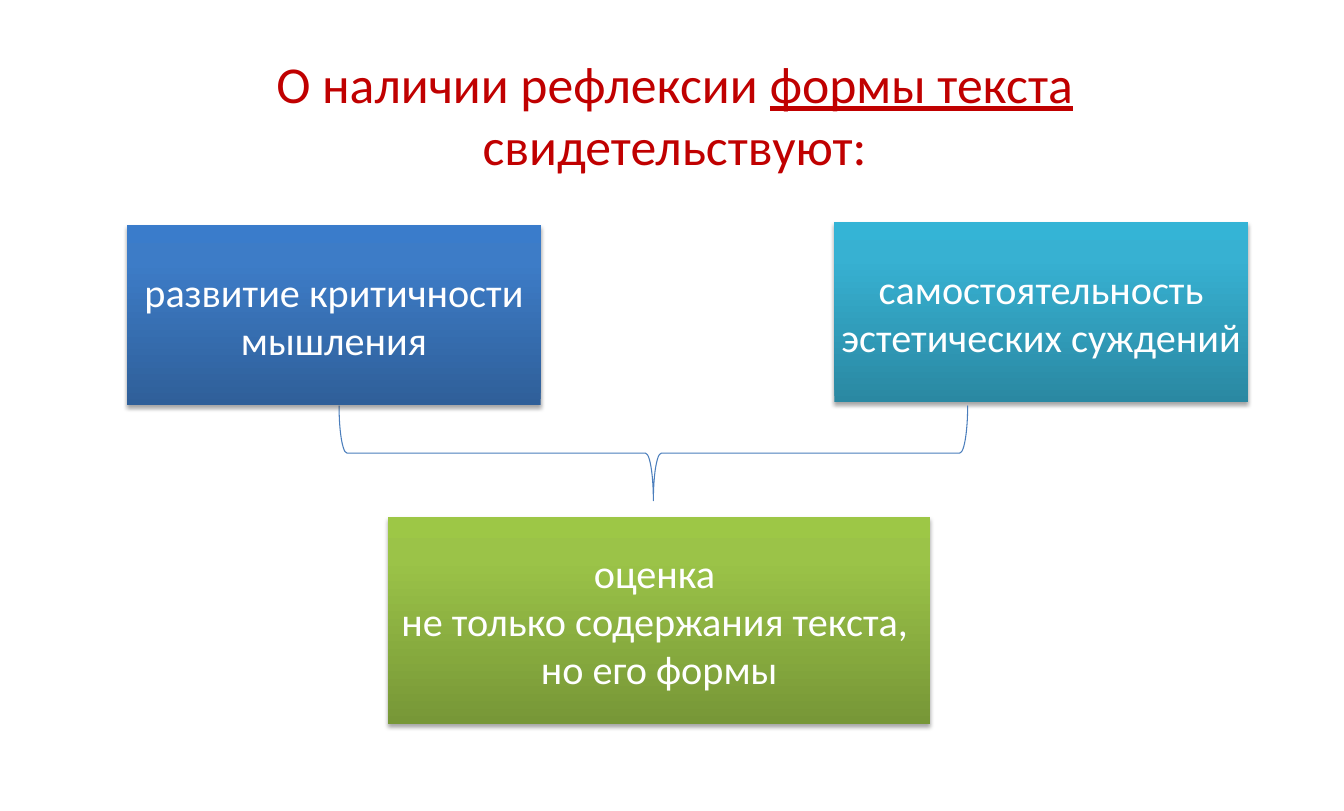
from lxml import etree
from pptx import Presentation
from pptx.dml.color import RGBColor
from pptx.enum.shapes import MSO_SHAPE as Shape
from pptx.enum.text import MSO_ANCHOR as Anchor, PP_ALIGN as Align
from pptx.oxml import parse_xml
from pptx.oxml.ns import nsdecls, qn
from pptx.util import Inches, Pt

FONT = "Calibri"
COLORS = {"title": "C00000", "text": "FFFFFF", "brace": "4B7EBC", "shadow": "000000"}
# Gradient stops from the bottom edge to the top edge
GRADIENTS = {
    "blue": ("2F5F99", "3D7CC7", "3A7CCB"),
    "teal": ("2A88A2", "37B1D2", "34B4D6"),
    "green": ("779737", "9BC348", "9DC746"),
}
STOPS = (0, 80, 100)


def style_font(font, size, color):
    font.name = FONT
    font.size = Pt(size)
    font.color.rgb = RGBColor.from_string(COLORS[color])


def set_insets(frame, side, end):
    frame.margin_left = frame.margin_right = Inches(side)
    frame.margin_top = frame.margin_bottom = Inches(end)


def add_gradient(shape, colors):
    """Fill upwards; the gradient goes before the line element."""
    stops = "".join(
        f'<a:gs pos="{pos * 1000}"><a:srgbClr val="{color}"/></a:gs>'
        for pos, color in zip(STOPS, colors)
    )
    shape.line.fill.background()
    line = shape._element.spPr.find(qn("a:ln"))
    line.addprevious(parse_xml(
        f'<a:gradFill {nsdecls("a")} rotWithShape="1"><a:gsLst>{stops}</a:gsLst>'
        '<a:lin ang="16200000" scaled="0"/></a:gradFill>'
    ))


def add_shadow(shape):
    shape.shadow.inherit = False
    effects = shape._element.spPr.find(qn("a:effectLst"))
    shadow = etree.SubElement(
        effects, qn("a:outerShdw"), blurRad=str(Pt(3.1)), dist=str(Pt(1.8)),
        dir="5400000", rotWithShape="0",
    )
    color = etree.SubElement(shadow, qn("a:srgbClr"), val=COLORS["shadow"])
    etree.SubElement(color, qn("a:alpha"), val="35000")


def add_title(slide, box, parts):
    frame = slide.shapes.add_textbox(*map(Inches, box)).text_frame
    frame.word_wrap = True
    set_insets(frame, 0, 0)
    heading = frame.paragraphs[0]
    heading.alignment = Align.CENTER
    for words, underlined in parts:
        run = heading.add_run()
        run.text = words
        style_font(run.font, 36, "title")
        run.font.underline = underlined


def add_card(slide, box, text, gradient, insets=(0.1, 0.05)):
    card = slide.shapes.add_shape(Shape.RECTANGLE, *map(Inches, box))
    add_gradient(card, GRADIENTS[gradient])
    add_shadow(card)
    frame = card.text_frame
    frame.word_wrap = True
    frame.vertical_anchor = Anchor.MIDDLE
    set_insets(frame, *insets)
    frame.text = text
    for paragraph in frame.paragraphs:
        paragraph.alignment = Align.CENTER
        for run in paragraph.runs:
            style_font(run.font, 28, "text")


def add_brace(slide, box):
    """Draw a brace that spans the box and points down."""
    left, top, width, height = box
    # The brace is upright before it turns about its centre
    brace = slide.shapes.add_shape(
        Shape.LEFT_BRACE,
        Inches(left + (width - height) / 2), Inches(top + (height - width) / 2),
        Inches(height), Inches(width),
    )
    brace.rotation = 270
    brace.shadow.inherit = False
    brace.fill.background()
    brace.line.color.rgb = RGBColor.from_string(COLORS["brace"])
    brace.line.width = Pt(0.75)


def main():
    deck = Presentation()
    deck.slide_width, deck.slide_height = Inches(13), Inches(7.84)
    slide = deck.slides.add_slide(deck.slide_layouts[6])

    # Heading
    add_title(slide, (1, 0.5, 11.05, 1.21), [
        ("О наличии рефлексии ", False),
        ("формы текста ", True),
        ("свидетельствуют:", False),
    ])

    # Two signs, joined by a brace into the result
    add_card(slide, (8.07, 2.15, 4, 1.74),
             "самостоятельность эстетических суждений", "teal", insets=(0, 0))
    add_brace(slide, (3.28, 3.92, 6.08, 0.92))
    add_card(slide, (1.23, 2.18, 4, 1.74), "развитие критичности мышления", "blue")
    add_card(slide, (3.75, 5, 5.25, 2),
             "оценка \nне только содержания текста, \nно его формы", "green")

    deck.save("out.pptx")


if __name__ == "__main__":
    main()
